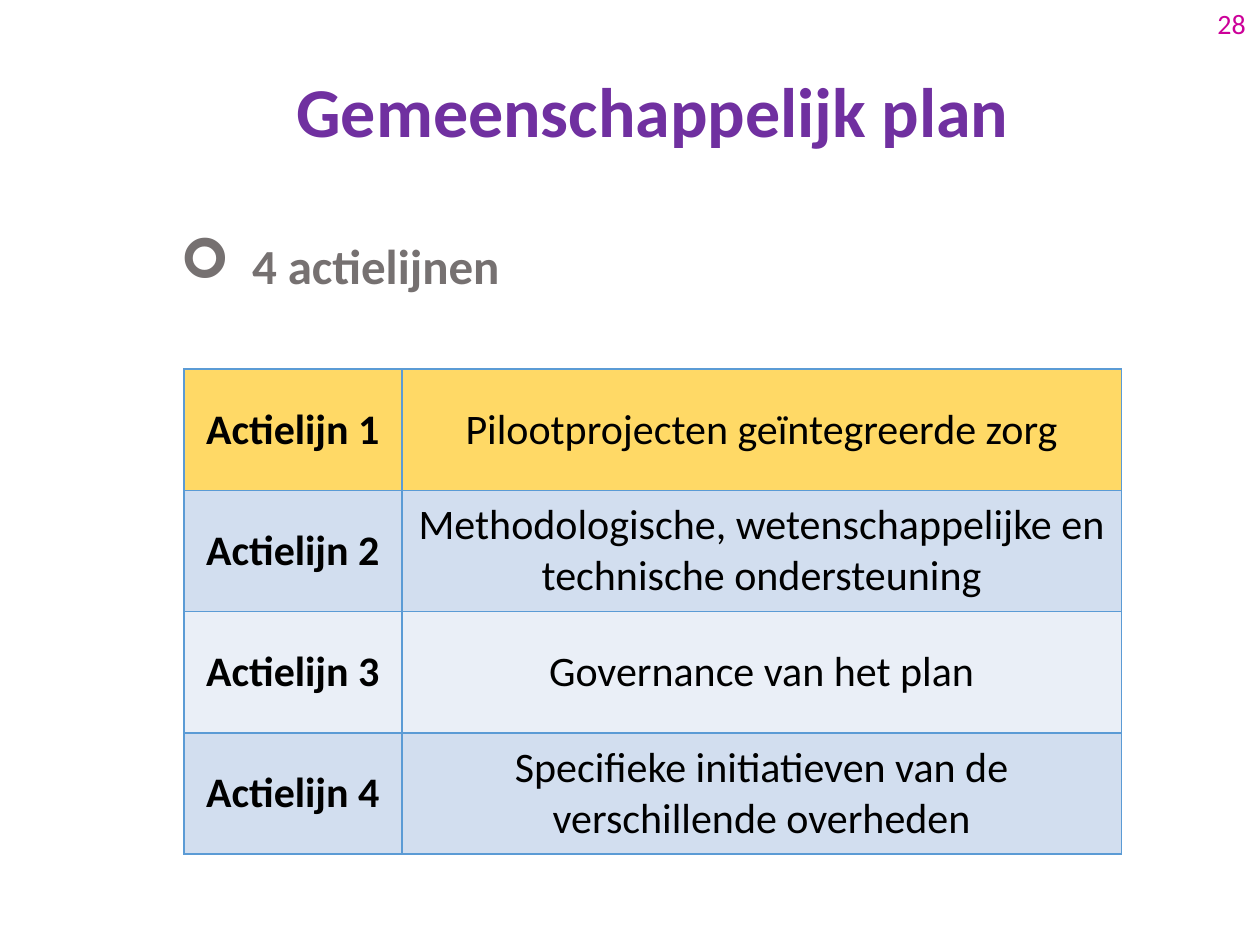
from lxml import etree
from pptx import Presentation
from pptx.dml.color import RGBColor
from pptx.enum import text as t
from pptx.oxml import ns
from pptx.util import Inches, Pt

PURPLE = RGBColor(0x70, 0x30, 0xA0)
GREY = RGBColor(0x76, 0x71, 0x71)
MAGENTA = RGBColor(0xCC, 0x00, 0x99)
BLACK = RGBColor(0, 0, 0)
BORDER = RGBColor(0x5B, 0x9B, 0xD5)
GOLD = RGBColor(0xFF, 0xD9, 0x66)
BLUE = RGBColor(0xD2, 0xDE, 0xEF)
PALE = RGBColor(0xEA, 0xEF, 0xF7)

ACTION_LINES = [
    ("Pilootprojecten geïntegreerde zorg", GOLD),
    ("Methodologische, wetenschappelijke en technische ondersteuning", BLUE),
    ("Governance van het plan", PALE),
    ("Specifieke initiatieven van de verschillende overheden", BLUE),
]


def place(shape, left, top, width, height):
    shape.left, shape.top = Inches(left), Inches(top)
    shape.width, shape.height = Inches(width), Inches(height)


def write(frame, words, size, color, bold=False, align=t.PP_ALIGN.CENTER,
          line_spacing=1.0, after=0):
    frame.word_wrap = True
    frame.auto_size = t.MSO_AUTO_SIZE.NONE
    paragraph = frame.paragraphs[0]
    paragraph.alignment = align
    paragraph.line_spacing = line_spacing
    paragraph.space_before, paragraph.space_after = Pt(0), Pt(after)
    run = paragraph.add_run()
    run.text = words
    run.font.name, run.font.size, run.font.bold = "Calibri", Pt(size), bold
    run.font.color.rgb = color
    return paragraph


def add_bullet(paragraph, character, indent, percent):
    properties = paragraph._p.get_or_add_pPr()
    properties.set("marL", str(Inches(indent)))
    properties.set("indent", str(-Inches(indent)))
    for tag, name, value in (("a:buSzPct", "val", str(percent * 1000)),
                             ("a:buFont", "typeface", "Wingdings"),
                             ("a:buChar", "char", character)):
        etree.SubElement(properties, ns.qn(tag)).set(name, value)


def add_borders(cell):
    properties = cell._tc.get_or_add_tcPr()
    for position, side in enumerate(("a:lnL", "a:lnR", "a:lnT", "a:lnB")):
        line = etree.Element(ns.qn(side), w=str(Pt(1)))
        fill = etree.SubElement(line, ns.qn("a:solidFill"))
        etree.SubElement(fill, ns.qn("a:srgbClr"), val=str(BORDER))
        properties.insert(position, line)


def fill_title(slide, *box):
    title = slide.shapes.title
    place(title, *box)
    title.text_frame.vertical_anchor = t.MSO_ANCHOR.MIDDLE
    write(title.text_frame, "Gemeenschappelijk plan", 40, PURPLE, bold=True,
          line_spacing=0.9)


def fill_body(slide, *box):
    body = slide.placeholders[1]
    place(body, *box)
    paragraph = write(body.text_frame, "4 actielijnen", 28, GREY, bold=True,
                      align=t.PP_ALIGN.LEFT, line_spacing=0.9, after=24)
    add_bullet(paragraph, "➢", indent=0.57, percent=114)


def add_action_table(slide, left, top, width, height, label_width=1.73):
    frame = slide.shapes.add_table(len(ACTION_LINES), 2, Inches(left), Inches(top),
                                   Inches(width), Inches(height))
    table = frame.table
    table.columns[0].width = Inches(label_width)
    table.columns[1].width = Inches(width - label_width)
    for index, (description, color) in enumerate(ACTION_LINES):
        for column, words in enumerate((f"Actielijn {index + 1}", description)):
            cell = table.cell(index, column)
            cell.margin_left = cell.margin_right = Inches(0.08)
            cell.margin_top = cell.margin_bottom = Inches(0.05)
            cell.vertical_anchor = t.MSO_ANCHOR.MIDDLE
            cell.fill.solid()
            cell.fill.fore_color.rgb = color
            add_borders(cell)
            write(cell.text_frame, words, 24, BLACK, bold=column == 0)


def add_page_number(slide, *box):
    number = slide.shapes.add_textbox(*map(Inches, box))
    write(number.text_frame, "28", 16, MAGENTA)


def main():
    presentation = Presentation()
    presentation.slide_width, presentation.slide_height = Inches(10), Inches(7.5)
    slide = presentation.slides.add_slide(presentation.slide_layouts[1])
    fill_title(slide, 1.46, 0.19, 7.44, 1.44)
    fill_body(slide, 1.33, 1.87, 7.29, 5.63)
    add_action_table(slide, 1.46, 2.93, 7.44, 3.85)
    add_page_number(slide, 9.55, 0, 0.45, 0.4)
    presentation.save("out.pptx")


if __name__ == "__main__":
    main()
